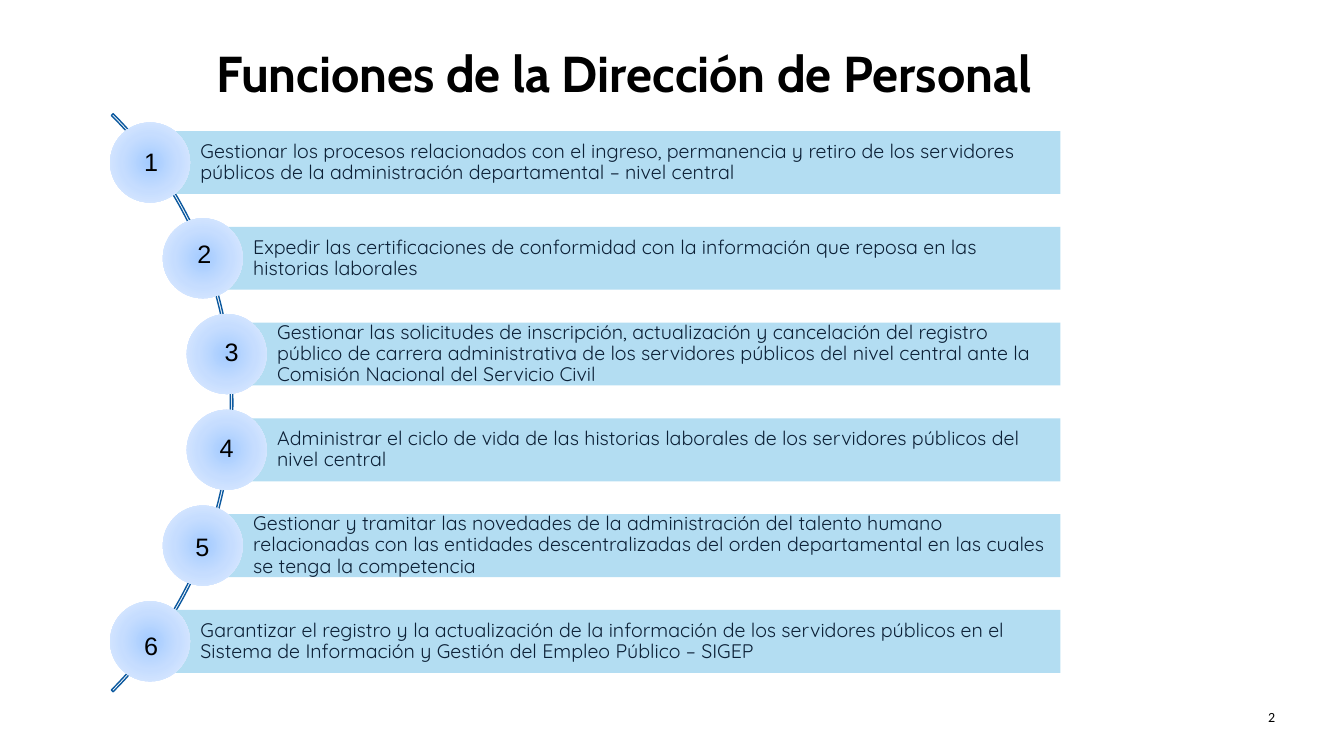
from lxml.etree import fromstring
from pptx import Presentation
from pptx.dml.color import RGBColor
from pptx.enum.shapes import MSO_SHAPE as Shape
from pptx.enum.text import MSO_ANCHOR as Anchor, MSO_AUTO_SIZE as AutoSize, PP_ALIGN as Align
from pptx.util import Pt

DRAWING = "http://schemas.openxmlformats.org/drawingml/2006/main"

# Each function: text, left edge of its bar, place of its number
FUNCTIONS = [
    ("Gestionar los procesos relacionados con el ingreso, permanencia y retiro de los "
     "servidores públicos de la administración departamental – nivel central",
     107.2, (95.8, 100.8)),
    ("Expedir las certificaciones de conformidad con la información que reposa en las "
     "historias laborales",
     144.9, (133.9, 166.5)),
    ("Gestionar las solicitudes de inscripción, actualización y cancelación del registro "
     "público de carrera administrativa de los servidores públicos del nivel central ante la "
     "Comisión Nacional del Servicio Civil",
     162, (153.4, 236.9)),
    ("Administrar el ciclo de vida de las historias laborales de los servidores públicos del "
     "nivel central",
     162, (149.8, 305.3)),
    ("Gestionar y tramitar las novedades de la administración del talento humano "
     "relacionadas con las entidades descentralizadas del orden departamental en las cuales "
     "se tenga la competencia",
     144.9, (132.5, 375.8)),
    ("Garantizar el registro y la actualización de la información de los servidores públicos "
     "en el Sistema de Información y Gestión del Empleo Público – SIGEP",
     107.2, (95.8, 446.4)),
]
FIRST_TOP, ROW_STEP = 93.6, 68.4
BAR_RIGHT, BAR_HEIGHT = 757.4, 45
CIRCLE_SIZE = 57.2


def color(value):
    return RGBColor.from_string(value)


def write(shape, text, font="Arial", size=18, fill="000000", bold=False, align=Align.LEFT,
          anchor=Anchor.TOP, spacing=1.0, insets=(7.2, 3.6, 7.2, 3.6)):
    frame = shape.text_frame
    frame.word_wrap = True
    frame.auto_size = AutoSize.NONE
    frame.vertical_anchor = anchor
    frame.margin_left, frame.margin_top, frame.margin_right, frame.margin_bottom = map(Pt, insets)
    paragraph = frame.paragraphs[0]
    paragraph.alignment = align
    paragraph.line_spacing = spacing
    run = paragraph.add_run()
    run.text = text
    run.font.name, run.font.size, run.font.bold = font, Pt(size), bold
    run.font.color.rgb = color(fill)


class FunctionsSlide:
    title_font, body_font, page_font = "Cabin", "Quicksand", "Calibri"
    bar_fill, body_color, arc_color = "B3DDF2", "0C2036", "0C599F"
    circle_stops = ((0, "A3CBFF"), (50, "C6DDFF"), (100, "E3EEFF"))

    def __init__(self, presentation):
        self.slide = presentation.slides.add_slide(presentation.slide_layouts[5])

    def title(self, text, *box):
        title = self.slide.shapes.title
        title.left, title.top, title.width, title.height = map(Pt, box)
        write(title, text, font=self.title_font, size=36, bold=True,
              align=Align.CENTER, anchor=Anchor.BOTTOM, spacing=0.9)

    def label(self, text, *box, **style):
        write(self.slide.shapes.add_textbox(*map(Pt, box)), text, **style)

    def shape(self, kind, *box):
        shape = self.slide.shapes.add_shape(kind, *map(Pt, box))
        shape.shadow.inherit = False
        shape.fill.background()
        shape.line.fill.background()
        return shape

    def arc(self, *box):
        arc = self.shape(Shape.BLOCK_ARC, *box)
        for index, value in enumerate((189, 27, 0.003)):
            arc.adjustments[index] = value
        arc.line.color.rgb = color(self.arc_color)
        arc.line.width = Pt(1)

    def bar(self, text, left, top):
        bar = self.shape(Shape.RECTANGLE, left, top, BAR_RIGHT - left, BAR_HEIGHT)
        bar.fill.solid()
        bar.fill.fore_color.rgb = color(self.bar_fill)
        write(bar, text, font=self.body_font, size=14, fill=self.body_color,
              anchor=Anchor.MIDDLE, spacing=0.9, insets=(36, 2.9, 2.9, 2.9))

    def circle(self, center_x, center_y):
        circle = self.shape(Shape.OVAL, center_x - CIRCLE_SIZE / 2,
                            center_y - CIRCLE_SIZE / 2, CIRCLE_SIZE, CIRCLE_SIZE)
        stops = "".join(f'<a:gs pos="{position * 1000}"><a:srgbClr val="{value}"/></a:gs>'
                        for position, value in self.circle_stops)
        gradient = fromstring(
            f'<a:gradFill xmlns:a="{DRAWING}"><a:gsLst>{stops}</a:gsLst><a:path path="circle">'
            '<a:fillToRect l="50000" t="50000" r="50000" b="50000"/></a:path></a:gradFill>')
        properties = circle.element.spPr
        properties.replace(properties.find(f"{{{DRAWING}}}noFill"), gradient)


def main():
    presentation = Presentation()
    presentation.slide_width, presentation.slide_height = Pt(960), Pt(540)
    page = FunctionsSlide(presentation)

    # Heading and page number
    page.title("Funciones de la Dirección de Personal", 106.6, 33.1, 678.2, 44.6)
    page.label("2", 886.3, 497.5, 31.7, 28.8, font=page.page_font, size=10,
               align=Align.RIGHT, anchor=Anchor.MIDDLE)

    # Arc behind the list
    page.arc(-417.6, -4.3, 583.9, 583.9)

    # Bars and circles
    for row, (text, left, _) in enumerate(FUNCTIONS):
        top = FIRST_TOP + row * ROW_STEP
        page.bar(text, left, top)
        page.circle(left, top + BAR_HEIGHT / 2)

    # Numbers on the circles
    for number, (_, _, place) in enumerate(FUNCTIONS, start=1):
        page.label(str(number), *place, 21.6, 28.8)

    presentation.save("out.pptx")


if __name__ == "__main__":
    main()
